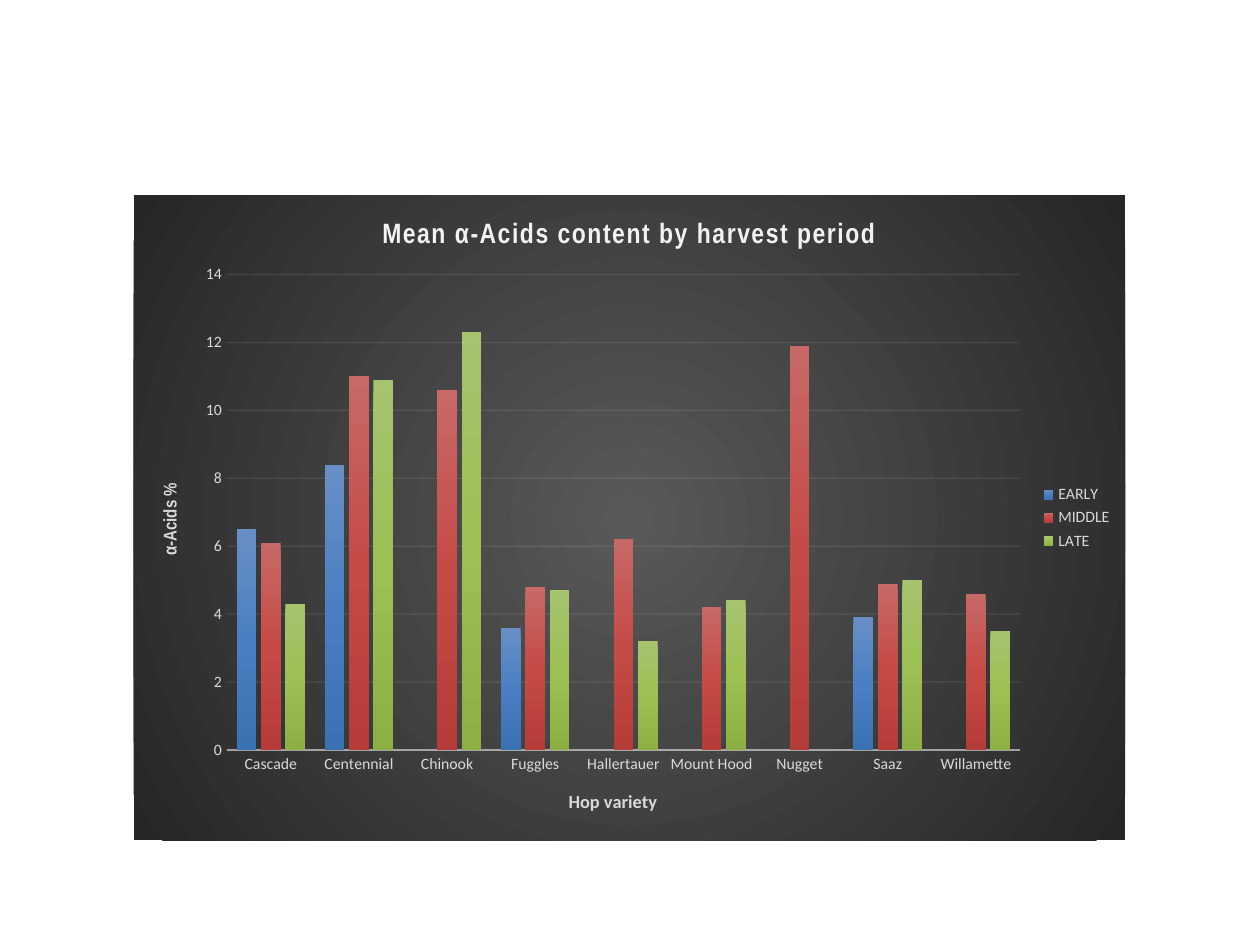
from dataclasses import dataclass

from pptx import Presentation
from pptx.chart.data import CategoryChartData
from pptx.dml.color import RGBColor
from pptx.enum.chart import XL_CHART_TYPE as ChartType
from pptx.enum.chart import XL_LEGEND_POSITION as LegendPosition
from pptx.enum.chart import XL_TICK_MARK as TickMark
from pptx.oxml import parse_xml
from pptx.oxml.ns import nsdecls, qn
from pptx.util import Inches, Pt


@dataclass(frozen=True)
class Theme:
    body_face: str = "Calibri"
    title_face: str = "Arial Narrow"
    bright: str = "F2F2F2"
    soft: str = "D9D9D9"
    backdrop: tuple = ("595959", "262626")
    bars: tuple = (
        ("688FC5", "4A80C3", "3B72B3"),
        ("C76967", "C64B47", "B63C39"),
        ("A6C36F", "9DC054", "8DB045"),
    )
    title_size: float = 16
    axis_title_size: float = 10.5
    label_size: float = 9


VARIETIES = ("Cascade", "Centennial", "Chinook", "Fuggles", "Hallertauer",
             "Mount Hood", "Nugget", "Saaz", "Willamette")
ACIDS = {
    "EARLY": (6.5, 8.4, 0, 3.6, 0, 0, 0, 3.9, 0),
    "MIDDLE": (6.1, 11, 10.6, 4.8, 6.2, 4.2, 11.9, 4.9, 4.6),
    "LATE": (4.3, 10.9, 12.3, 4.7, 3.2, 4.4, 0, 5, 3.5),
}
LINEAR = '<a:lin ang="5400000" scaled="0"/>'
RADIAL = ('<a:path path="circle"><a:fillToRect l="50000" t="50000" '
          'r="50000" b="50000"/></a:path>')


def set_format(target, values):
    for name, value in values.items():
        setattr(target, name, value)


def gradient(colors, direction):
    """Return a gradient fill with evenly spaced stops."""
    step = 100000 // (len(colors) - 1)
    stops = "".join(
        f'<a:gs pos="{i * step}"><a:srgbClr val="{color}"/></a:gs>'
        for i, color in enumerate(colors))
    return parse_xml(f'<a:gradFill {nsdecls("a")} rotWithShape="1">'
                     f"<a:gsLst>{stops}</a:gsLst>{direction}</a:gradFill>")


class ChartPage:
    def __init__(self, deck, theme):
        self.theme = theme
        self.page = deck.slides.add_slide(deck.slide_layouts[6])

    def set_font(self, font, size, color, face=None, bold=False):
        set_format(font, {"size": Pt(size), "bold": bold,
                          "name": face or self.theme.body_face})
        font.color.rgb = RGBColor.from_string(color)

    def set_line(self, line, width, opacity):
        line.width = Pt(width)
        line.color.rgb = RGBColor.from_string(self.theme.bright)
        color = line._get_or_add_ln().find(".//" + qn("a:srgbClr"))
        color.append(parse_xml(
            f'<a:alpha {nsdecls("a")} val="{opacity * 1000}"/>'))

    def title(self, owner, text, size, color, face=None, spacing=0):
        owner.has_title = True
        span = self.text_span(getattr(owner, "chart_title", None)
                              or owner.axis_title, text)
        self.set_font(span.font, size, color, face, bold=True)
        if spacing:
            span.font._element.set("spc", str(spacing))

    def text_span(self, title, text):
        span = title.text_frame.paragraphs[0].add_run()
        span.text = text
        return span

    def axis(self, axis, text, face=None):
        theme = self.theme
        set_format(axis, {"major_tick_mark": TickMark.NONE,
                          "minor_tick_mark": TickMark.NONE})
        self.set_font(axis.tick_labels.font, theme.label_size, theme.soft)
        self.title(axis, text, theme.axis_title_size, theme.soft, face)

    def place_plot(self, chart, **fractions):
        """Fix the inner plot area as fractions of the chart."""
        plot_area = chart._chartSpace.find(".//" + qn("c:plotArea"))
        for layout in plot_area.findall(qn("c:layout")):
            plot_area.remove(layout)
        sizes = "".join(f'<c:{name} val="{value}"/>'
                        for name, value in fractions.items())
        plot_area.insert(0, parse_xml(
            f'<c:layout {nsdecls("c")}><c:manualLayout>'
            '<c:layoutTarget val="inner"/><c:xMode val="edge"/>'
            f'<c:yMode val="edge"/>{sizes}</c:manualLayout></c:layout>'))

    def fill_background(self, chart):
        area = parse_xml(f'<c:spPr {nsdecls("c", "a")}/>')
        area.append(gradient(self.theme.backdrop, RADIAL))
        area.append(parse_xml(f'<a:ln {nsdecls("a")}><a:noFill/></a:ln>'))
        chart._chartSpace.find(qn("c:chart")).addnext(area)

    def column_chart(self, left, top, width, height):
        theme = self.theme
        data = CategoryChartData(number_format="0.0")
        data.categories = VARIETIES
        for name, values in ACIDS.items():
            data.add_series(name, values)
        chart = self.page.shapes.add_chart(
            ChartType.COLUMN_CLUSTERED, Inches(left), Inches(top),
            Inches(width), Inches(height), data).chart
        set_format(chart.font, {"size": Pt(10), "name": theme.body_face})
        self.fill_background(chart)
        self.place_plot(chart, x=0.094, y=0.123, w=0.8, h=0.737)
        self.title(chart, "Mean α-Acids content by harvest period",
                   theme.title_size, theme.bright, theme.title_face, 100)

        plot = chart.plots[0]
        set_format(plot, {"gap_width": 100, "overlap": -24,
                          "vary_by_categories": False})
        for series, colors in zip(plot.series, theme.bars):
            series.invert_if_negative = False
            series._element.get_or_add_spPr().append(gradient(colors, LINEAR))

        self.axis(chart.category_axis, "Hop variety")
        self.set_line(chart.category_axis.format.line, 1, 54)
        values = chart.value_axis
        self.axis(values, "α-Acids %", theme.title_face)
        set_format(values, {"minimum_scale": 0, "maximum_scale": 14,
                            "major_unit": 2})
        set_format(values.tick_labels, {"number_format": "#,##0",
                                        "number_format_is_linked": False})
        values.format.line.fill.background()
        self.set_line(values.major_gridlines.format.line, 0.75, 10)

        chart.has_legend = True
        set_format(chart.legend, {"position": LegendPosition.RIGHT,
                                  "include_in_layout": False})
        self.set_font(chart.legend.font, theme.label_size, theme.soft)


def main():
    deck = Presentation()
    set_format(deck, {"slide_width": Inches(10), "slide_height": Inches(7.5)})
    ChartPage(deck, Theme()).column_chart(1.06, 1.55, 7.87, 5.12)
    deck.save("out.pptx")


if __name__ == "__main__":
    main()
